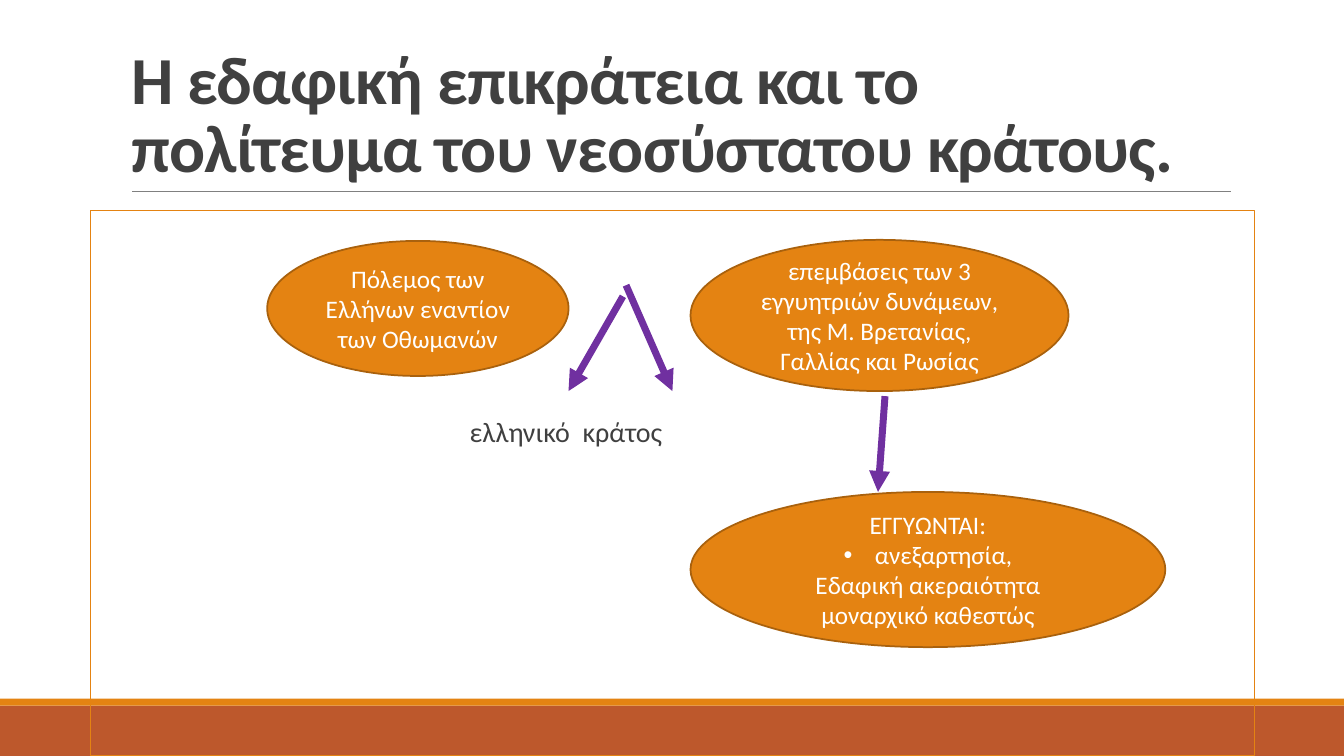
from lxml import etree
from pptx import Presentation, util as u
from pptx.dml.color import RGBColor
from pptx.enum import shapes, text
from pptx.oxml.ns import qn

COLORS = {name: RGBColor.from_string(value) for name, value in {
    "orange": "E48312", "rust": "BD582C", "brown": "A9610D", "purple": "7030A0",
    "gray": "808080", "ink": "404040", "white": "FFFFFF"}.items()}

presentation = Presentation()
presentation.slide_width, presentation.slide_height = u.Inches(13.33), u.Inches(7.5)
slide = presentation.slides.add_slide(presentation.slide_layouts[5])

# Grid of 100 columns by 100 rows; every position below is (column, row)
COLUMN, ROW = presentation.slide_width / 100, presentation.slide_height / 100


def add_block(preset, box, fill=None, outline=None, outline_width=1):
    """Add a shape whose box is left, top, width, height in grid units."""
    left, top, width, height = box
    shape = slide.shapes.add_shape(preset, int(left * COLUMN), int(top * ROW),
                                   int(width * COLUMN), int(height * ROW))
    shape.shadow.inherit = False
    if fill:
        shape.fill.solid()
        shape.fill.fore_color.rgb = COLORS[fill]
    else:
        shape.fill.background()
    if outline:
        shape.line.color.rgb = COLORS[outline]
        shape.line.width = u.Pt(outline_width)
    else:
        shape.line.fill.background()
    shape.text_frame.word_wrap = True
    return shape


def add_run(paragraph, wording, size, color, bold=False):
    run = paragraph.add_run()
    run.text = wording
    run.font.name, run.font.size, run.font.bold = "Calibri", u.Pt(size), bold
    run.font.color.rgb = COLORS[color]
    return run


# Footer bands
RECTANGLE, OVAL = shapes.MSO_SHAPE.RECTANGLE, shapes.MSO_SHAPE.OVAL
add_block(RECTANGLE, (0, 93.33, 100, 6.67), "rust")
add_block(RECTANGLE, (0, 92.4, 100, 0.93), "orange")

# Title
title = slide.shapes.title
title.left, title.top = int(9 * COLUMN), int(4.13 * ROW)
title.width, title.height = int(82.5 * COLUMN), int(21.2 * ROW)
title.text_frame.word_wrap = True
title.text_frame.auto_size = text.MSO_AUTO_SIZE.NONE
title.text_frame.vertical_anchor = text.MSO_ANCHOR.BOTTOM
heading = title.text_frame.paragraphs[0]
heading.alignment = text.PP_ALIGN.LEFT
heading.line_spacing = 0.85
heading_run = add_run(heading, "Η εδαφική επικράτεια και το πολίτευμα του νεοσύστατου κράτους.",
                      48, "ink", bold=True)
heading_run.font._element.set("spc", "-50")

# Content frame with the outcome of the war
frame = add_block(RECTANGLE, (6.75, 27.87, 86.63, 72.13), outline="orange", outline_width=0.75)
frame.text_frame.vertical_anchor = text.MSO_ANCHOR.TOP
frame.text_frame.margin_left, frame.text_frame.margin_top = int(28.2 * COLUMN), int(27.5 * ROW)
outcome = frame.text_frame.paragraphs[0]
outcome.alignment = text.PP_ALIGN.LEFT
outcome.line_spacing = 0.9
add_run(outcome, "ελληνικό  κράτος", 20, "ink")

# Title rule and arrows: start, end, colour, width, arrowhead
lines = [
    ((9.83, 25.33), (91.58, 25.33), "gray", 0.5, False),
    ((46.35, 39.2), (42.3, 51.73), "purple", 5, True),
    ((46.58, 37.73), (50.03, 51.73), "purple", 5, True),
    ((65.85, 52.4), (65.33, 65.07), "purple", 5, True),
]
for start, end, color, width, has_head in lines:
    connector = slide.shapes.add_connector(
        shapes.MSO_CONNECTOR.STRAIGHT, int(start[0] * COLUMN), int(start[1] * ROW),
        int(end[0] * COLUMN), int(end[1] * ROW))
    connector.line.color.rgb = COLORS[color]
    connector.line.width = u.Pt(width)
    if has_head:
        etree.SubElement(connector.line._get_or_add_ln(), qn("a:tailEnd"), type="triangle")
    etree.SubElement(connector._element.spPr, qn("a:effectLst"))

# Ellipses: box and paragraphs
BULLETED = "ανεξαρτησία,"
ellipses = [
    ((19.88, 31.87, 22.43, 17.87), ["Πόλεμος των Ελλήνων εναντίον των Οθωμανών"]),
    ((51.38, 31.73, 28.13, 20),
     ["επεμβάσεις των 3 εγγυητριών δυνάμεων, της Μ. Βρετανίας, Γαλλίας και Ρωσίας"]),
    ((51.38, 65.07, 35.33, 20.53),
     ["ΕΓΓΥΩΝΤΑΙ:", BULLETED, "Εδαφική ακεραιότητα", "μοναρχικό καθεστώς"]),
]
for box, wordings in ellipses:
    text_frame = add_block(OVAL, box, "orange", "brown", 1.25).text_frame
    text_frame.vertical_anchor = text.MSO_ANCHOR.MIDDLE
    for index, wording in enumerate(wordings):
        paragraph = text_frame.add_paragraph() if index else text_frame.paragraphs[0]
        paragraph.alignment = text.PP_ALIGN.CENTER
        if wording == BULLETED:
            properties = paragraph._p.get_or_add_pPr()
            properties.set("marL", str(u.Inches(0.31)))
            properties.set("indent", str(-u.Inches(0.31)))
            etree.SubElement(properties, qn("a:buFont"), typeface="Arial")
            etree.SubElement(properties, qn("a:buChar"), char="•")
        add_run(paragraph, wording, 18, "white")

presentation.save("out.pptx")
